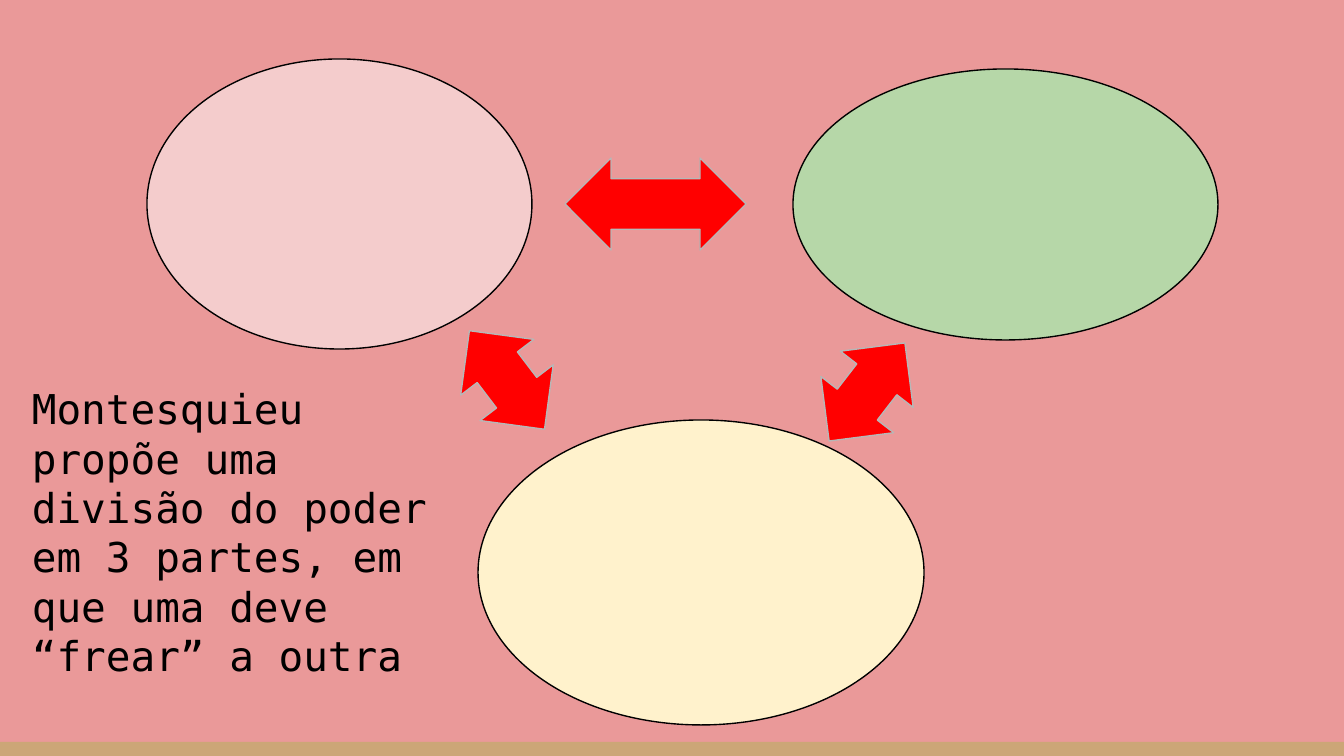
from typing import NamedTuple

from pptx import Presentation
from pptx.dml.color import RGBColor
from pptx.enum.shapes import MSO_SHAPE
from pptx.enum.text import MSO_AUTO_SIZE
from pptx.util import Emu, Pt

SLIDE_W, SLIDE_H = 1344, 756
EMU_PER_PX = 9144000 / SLIDE_W
FONT = "DejaVu Sans Mono"
COLORS = {
    "background": "EA9999",
    "footer": "CCA677",
    "green": "B6D7A8",
    "cream": "FFF2CC",
    "pink": "F4CCCC",
    "arrow": "FF0000",
    "arrow_line": "B7B7B7",
    "black": "000000",
}


class Box(NamedTuple):
    left: int
    top: int
    width: int
    height: int


class Power(NamedTuple):
    box: Box
    fill: str


class Arrow(NamedTuple):
    box: Box
    rotation: float


POWERS = [
    Power(Box(793, 69, 425, 271), "green"),
    Power(Box(478, 420, 446, 305), "cream"),
    Power(Box(147, 59, 385, 290), "pink"),
]
ARROWS = [
    Arrow(Box(445, 334, 124, 92), 52.7),
    Arrow(Box(805, 346, 124, 92), 127.7),
    Arrow(Box(565, 158, 181, 92), 0),
]


def px(n: int) -> Emu:
    return Emu(round(n * EMU_PER_PX))


def rgb(name: str) -> RGBColor:
    return RGBColor.from_string(COLORS[name])


def add_figure(s, kind: MSO_SHAPE, box: Box, fill: str, line: str | None = None):
    sp = s.shapes.add_shape(kind, *map(px, box))
    sp.shadow.inherit = False
    sp.fill.solid()
    sp.fill.fore_color.rgb = rgb(fill)
    if line:
        sp.line.color.rgb = rgb(line)
        sp.line.width = Pt(0.75)
    else:
        sp.line.fill.background()
    return sp


def add_arrow(s, arrow: Arrow) -> None:
    sp = add_figure(s, MSO_SHAPE.LEFT_RIGHT_ARROW, arrow.box, "arrow", "arrow_line")
    sp.adjustments[0] = 0.55
    sp.adjustments[1] = 0.5
    sp.rotation = arrow.rotation


def add_text(s, text: str, box: Box, *, size: int, color: str, inset: int) -> None:
    tf = s.shapes.add_textbox(*map(px, box)).text_frame
    tf.word_wrap = True
    tf.auto_size = MSO_AUTO_SIZE.SHAPE_TO_FIT_TEXT
    tf.margin_left = tf.margin_right = tf.margin_top = tf.margin_bottom = px(inset)
    r = tf.paragraphs[0].add_run()
    r.text = text
    r.font.name = FONT
    r.font.size = Pt(size)
    r.font.color.rgb = rgb(color)


def main() -> None:
    prs = Presentation()
    prs.slide_width, prs.slide_height = px(SLIDE_W), px(SLIDE_H)
    s = prs.slides.add_slide(prs.slide_layouts[6])
    s.background.fill.solid()
    s.background.fill.fore_color.rgb = rgb("background")

    add_figure(s, MSO_SHAPE.RECTANGLE, Box(0, 742, SLIDE_W, 14), "footer")
    for power in POWERS:
        add_figure(s, MSO_SHAPE.OVAL, power.box, power.fill, "black")
    for arrow in ARROWS:
        add_arrow(s, arrow)
    add_text(
        s,
        "Montesquieu propõe uma divisão do poder em 3 partes, em que uma deve “frear” a outra",
        Box(19, 371, 441, 325),
        size=22,
        color="black",
        inset=13,
    )
    prs.save("out.pptx")


if __name__ == "__main__":
    main()
